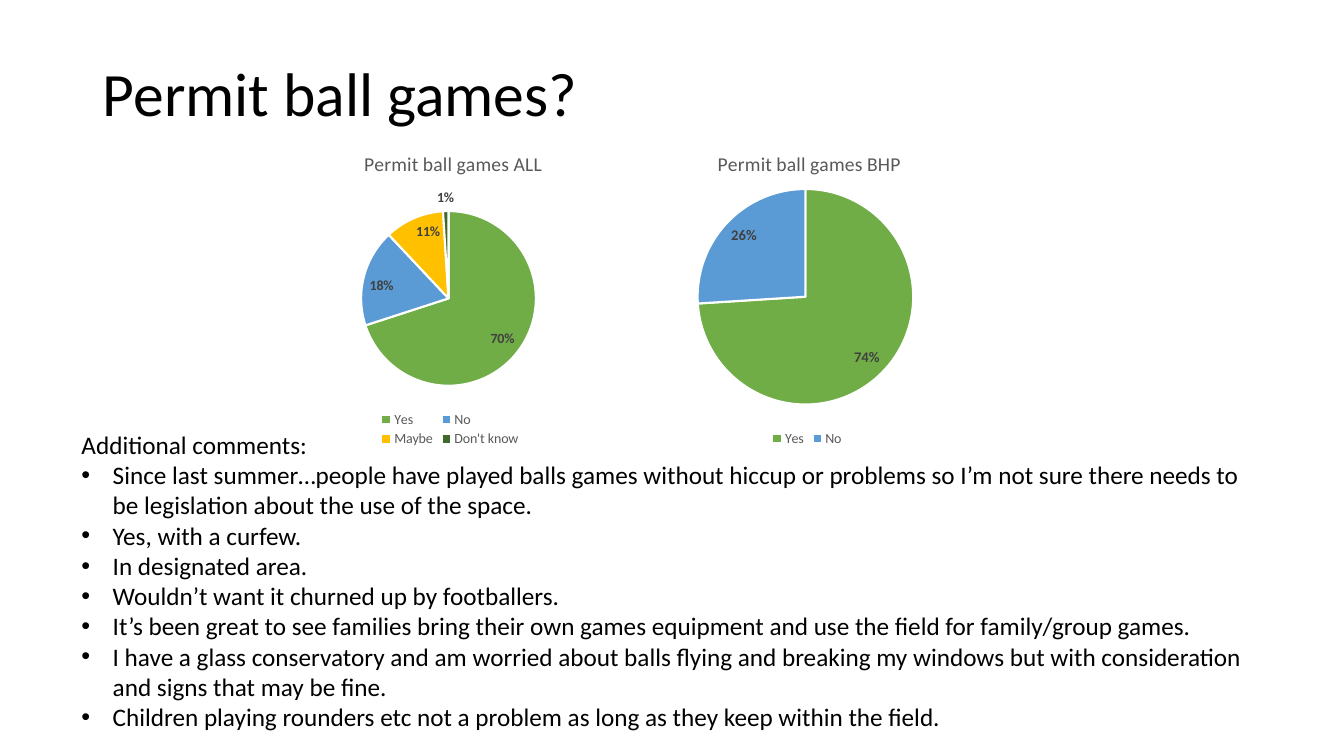
from lxml.etree import SubElement
from pptx import Presentation
from pptx.chart.data import CategoryChartData
from pptx.dml.color import RGBColor
from pptx.enum.chart import XL_CHART_TYPE, XL_LABEL_POSITION, XL_LEGEND_POSITION
from pptx.enum.text import MSO_ANCHOR, MSO_AUTO_SIZE, PP_ALIGN
from pptx.oxml.ns import qn
from pptx.util import Inches, Pt

ANSWER_COLORS = ["70AD47", "5B9BD5", "FFC000", "43682B"]
COMMENTS = [
    "Since last summer…people have played balls games without hiccup or problems "
    "so I’m not sure there needs to be legislation about the use of the space.",
    "Yes, with a curfew.",
    "In designated area.",
    "Wouldn’t want it churned up by footballers.",
    "It’s been great to see families bring their own games equipment and use the "
    "field for family/group games.",
    "I have a glass conservatory and am worried about balls flying and breaking my "
    "windows but with consideration and signs that may be fine.",
    "Children playing rounders etc not a problem as long as they keep within the field.",
]


def color(hex_string):
    return RGBColor.from_string(hex_string)


def set_layout(parent, index, **fractions):
    """Place a chart part by fractions of the chart's width and height."""
    for existing in parent.findall(qn("c:layout")):
        parent.remove(existing)
    layout = SubElement(parent, qn("c:layout"))
    parent.insert(index, layout)
    manual = SubElement(layout, qn("c:manualLayout"))
    if parent.tag == qn("c:plotArea"):
        SubElement(manual, qn("c:layoutTarget")).set("val", "inner")
    for axis in "xy":
        SubElement(manual, qn(f"c:{axis}Mode")).set("val", "edge")
    for name, value in fractions.items():
        SubElement(manual, qn(f"c:{name}")).set("val", str(value))


class SlideBuilder:
    font_name = "Calibri"

    def __init__(self, presentation):
        self.slide = presentation.slides.add_slide(presentation.slide_layouts[5])

    def style(self, font, size, hex_string, bold=False):
        font.name = self.font_name
        font.size = Pt(size)
        font.bold = bold
        font.color.rgb = color(hex_string)

    def add_run(self, paragraph, text, size, hex_string="000000"):
        run = paragraph.add_run()
        run.text = text
        self.style(run.font, size, hex_string)

    def title(self, text, left, top, width, height):
        shape = self.slide.shapes.title
        shape.left, shape.top = Inches(left), Inches(top)
        shape.width, shape.height = Inches(width), Inches(height)
        shape.text_frame.vertical_anchor = MSO_ANCHOR.MIDDLE
        paragraph = shape.text_frame.paragraphs[0]
        paragraph.alignment = PP_ALIGN.LEFT
        paragraph.line_spacing = 0.9
        self.add_run(paragraph, text, 44)

    def bullet_list(self, heading, items, left, top, width, height):
        shape = self.slide.shapes.add_textbox(
            Inches(left), Inches(top), Inches(width), Inches(height))
        frame = shape.text_frame
        frame.word_wrap = True
        frame.auto_size = MSO_AUTO_SIZE.SHAPE_TO_FIT_TEXT
        self.add_run(frame.paragraphs[0], heading, 18)
        for item in items:
            paragraph = frame.add_paragraph()
            self.add_run(paragraph, item, 18)
            properties = paragraph._p.get_or_add_pPr()
            properties.set("marL", str(Inches(0.31)))
            properties.set("indent", str(-Inches(0.31)))
            SubElement(properties, qn("a:buFont")).set("typeface", "Arial")
            SubElement(properties, qn("a:buChar")).set("char", "•")

    def pie(self, title, shares, left, label_size, title_x, plot, legend=None):
        data = CategoryChartData(number_format="0%")
        data.categories = list(shares)
        data.add_series("Series 1", list(shares.values()))
        chart = self.slide.shapes.add_chart(
            XL_CHART_TYPE.PIE, Inches(left), Inches(1.26),
            Inches(3.29), Inches(3.21), data).chart
        self.style(chart.font, 10, "000000")

        chart.has_title = True
        self.add_run(chart.chart_title.text_frame.paragraphs[0], title, 14, "595959")
        chart.has_legend = True
        chart.legend.position = XL_LEGEND_POSITION.BOTTOM
        chart.legend.include_in_layout = False
        self.style(chart.legend.font, 10, "595959")

        chart.plots[0].vary_by_categories = True
        series = chart.plots[0].series[0]
        labels = series.data_labels
        labels.show_value = True
        labels.show_percentage = False
        labels.number_format = "0%"
        labels.number_format_is_linked = False
        labels.position = XL_LABEL_POSITION.INSIDE_END
        self.style(labels.font, label_size, "404040", bold=True)
        for index, share in enumerate(shares.values()):
            point = series.points[index]
            point.format.fill.solid()
            point.format.fill.fore_color.rgb = color(ANSWER_COLORS[index])
            point.format.line.color.rgb = color("FFFFFF")
            point.format.line.width = Pt(1.5)
            if share < 0.05:
                self.style(point.data_label.font, label_size, "404040", bold=True)
                point.data_label.position = XL_LABEL_POSITION.OUTSIDE_END

        root = chart.element.find(qn("c:chart"))
        set_layout(root.find(qn("c:title")), 1, x=title_x, y=0.06)
        set_layout(root.find(qn("c:plotArea")), 0, **plot)
        if legend:
            set_layout(root.find(qn("c:legend")), 1, **legend)


def main():
    presentation = Presentation()
    presentation.slide_width = Inches(13.33)
    presentation.slide_height = Inches(7.5)
    builder = SlideBuilder(presentation)
    builder.title("Permit ball games?", 0.92, 0.4, 11.5, 1.11)
    builder.bullet_list("Additional comments:", COMMENTS, 0.71, 4.21, 11.71, 3.13)
    builder.pie(
        "Permit ball games ALL",
        {"Yes": 0.7, "No": 0.18, "Maybe": 0.11, "Don't know": 0.01},
        left=2.82, label_size=10, title_x=0.23,
        plot={"x": 0.23, "y": 0.26, "w": 0.53, "h": 0.54},
        legend={"x": 0.28, "y": 0.87, "w": 0.44, "h": 0.13})
    builder.pie(
        "Permit ball games BHP", {"Yes": 0.74, "No": 0.26},
        left=6.36, label_size=10.5, title_x=0.22,
        plot={"x": 0.17, "y": 0.19, "w": 0.65, "h": 0.67})
    presentation.save("out.pptx")


if __name__ == "__main__":
    main()
